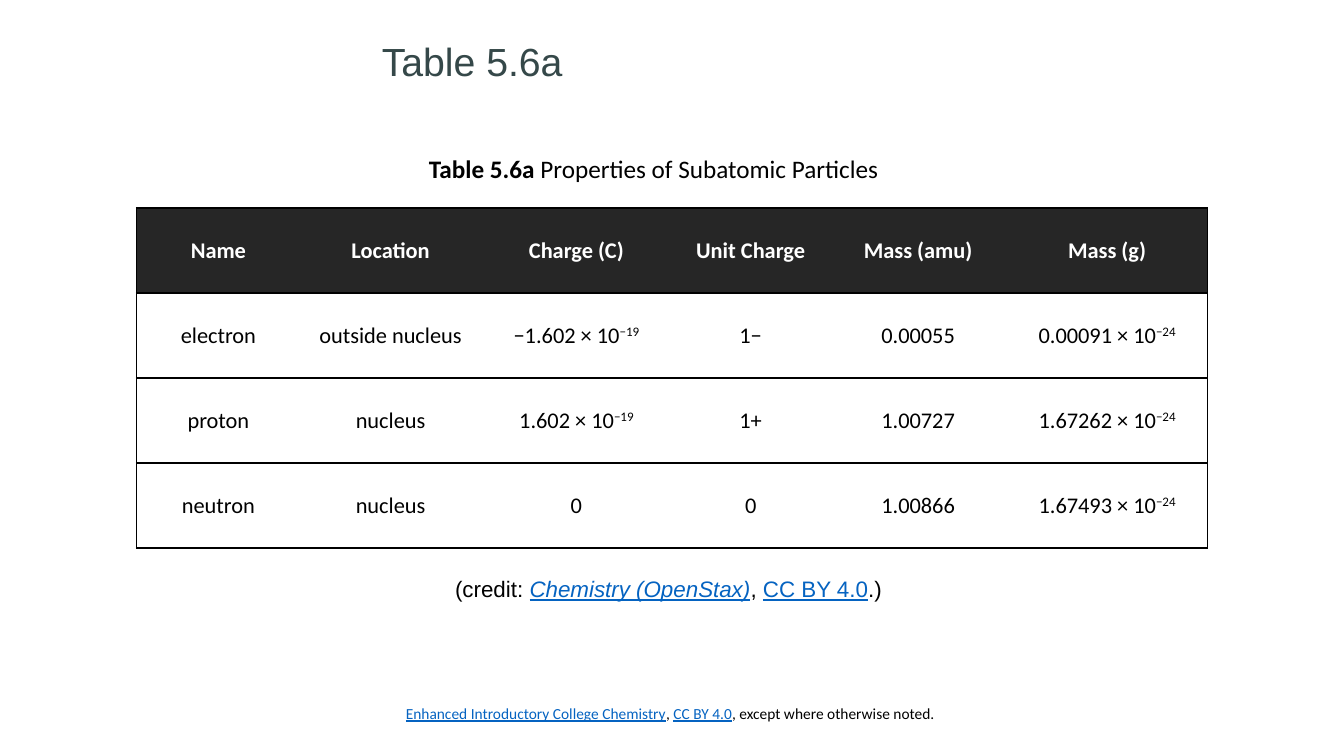
from dataclasses import dataclass

from lxml import etree
from pptx import Presentation
from pptx.dml.color import RGBColor
from pptx.enum.text import MSO_ANCHOR, MSO_AUTO_SIZE, PP_ALIGN
from pptx.oxml.ns import qn
from pptx.util import Pt

PX = 9525
LEFT, CENTER = PP_ALIGN.LEFT, PP_ALIGN.CENTER
MIDDLE, BOTTOM = MSO_ANCHOR.MIDDLE, MSO_ANCHOR.BOTTOM
GROW, FIXED = MSO_AUTO_SIZE.SHAPE_TO_FIT_TEXT, MSO_AUTO_SIZE.NONE


@dataclass(frozen=True)
class Theme:
    sans: str = "Arial"
    body: str = "Calibri"
    ink: str = "000000"
    paper: str = "FFFFFF"
    head: str = "262626"
    title: str = "354849"
    link: str = "0563C1"
    big: int = 28
    mid: int = 18
    cell: int = 16
    small: int = 11


T = Theme()
LINK = dict(color=T.link, line=True)

COLS = [156, 172, 182, 150, 169, 191]
ROW = 81
HEADS = ["Name", "Location", "Charge (C)", "Unit Charge", "Mass (amu)", "Mass (g)"]
ROWS = [
    ["electron", "outside nucleus", "−1.602 × 10^−19", "1−", "0.00055", "0.00091 × 10^−24"],
    ["proton", "nucleus", "1.602 × 10^−19", "1+", "1.00727", "1.67262 × 10^−24"],
    ["neutron", "nucleus", "0", "0", "1.00866", "1.67493 × 10^−24"],
]


def px(*nums):
    return [n * PX for n in nums]


def write(para, text, size=T.cell, face=T.body, color=T.ink,
          bold=False, slant=False, line=False, raised=False):
    run = para.add_run()
    run.text = text
    font = run.font
    font.size, font.name = Pt(size), face
    font.bold, font.italic, font.underline = bold, slant, line
    font.color.rgb = RGBColor.from_string(color)
    if raised:
        run._r.get_or_add_rPr().set("baseline", "30000")


def add_line(slide, box, parts, wrap=True, fit=FIXED, **base):
    frame = slide.shapes.add_textbox(*px(*box)).text_frame
    frame.word_wrap, frame.auto_size = wrap, fit
    for text, style in parts:
        write(frame.paragraphs[0], text, **{**base, **style})


def add_title(slide, box, text):
    title = slide.shapes.title
    title.left, title.top, title.width, title.height = px(*box)
    frame = title.text_frame
    frame.vertical_anchor, frame.auto_size = BOTTOM, FIXED
    para = frame.paragraphs[0]
    para.alignment, para.line_spacing = LEFT, 0.9
    write(para, text, size=T.big, face=T.sans, color=T.title)


def set_edges(cell, shown):
    props = cell._tc.get_or_add_tcPr()
    for spot, side in enumerate("LRTB"):
        edge = etree.Element(qn(f"a:ln{side}"), w=str(Pt(1)))
        if side in shown:
            fill = etree.SubElement(edge, qn("a:solidFill"))
            etree.SubElement(fill, qn("a:srgbClr"), val=T.ink)
        else:
            etree.SubElement(edge, qn("a:noFill"))
        props.insert(spot, edge)


def fill_cell(cell, text, back, shown, **style):
    cell.fill.solid()
    cell.fill.fore_color.rgb = RGBColor.from_string(back)
    cell.vertical_anchor = MIDDLE
    cell.margin_left = cell.margin_right = 5 * PX
    cell.margin_top = cell.margin_bottom = 2 * PX
    para = cell.text_frame.paragraphs[0]
    para.alignment = CENTER
    base, _, power = text.partition("^")
    write(para, base, **style)
    if power:
        write(para, power, raised=True, **style)
    set_edges(cell, shown)


def add_grid(slide, left, top):
    rows = [HEADS, *ROWS]
    box = px(left, top, sum(COLS), ROW * len(rows))
    grid = slide.shapes.add_table(len(rows), len(COLS), *box).table
    grid.horz_banding = False
    for col, width in zip(grid.columns, COLS):
        col.width = width * PX
    last = len(COLS) - 1
    for i, row in enumerate(rows):
        grid.rows[i].height = ROW * PX
        back, color = (T.paper, T.ink) if i else (T.head, T.paper)
        for j, text in enumerate(row):
            shown = "TB" + "L" * (j == 0) + "R" * (j == last)
            fill_cell(grid.cell(i, j), text, back, shown, color=color, bold=i == 0)


def main():
    deck = Presentation()
    deck.slide_width, deck.slide_height = px(1280, 720)
    slide = deck.slides.add_slide(deck.slide_layouts[5])
    add_line(slide, (377, 666, 679, 38), [
        ("Enhanced Introductory College Chemistry", LINK),
        (", ", {}),
        ("CC BY 4.0", LINK),
        (", except where otherwise noted.", {}),
    ], size=T.small)
    add_title(slide, (354, 19, 413, 67), "Table 5.6a")
    add_line(slide, (399, 141, 482, 38), [
        ("Table 5.6a", dict(bold=True)),
        ("\u00a0Properties of Subatomic Particles", {}),
    ], fit=GROW, size=T.mid)
    add_grid(slide, 130, 198)
    add_line(slide, (424, 543, 431, 36), [
        ("(credit: ", {}),
        ("Chemistry (OpenStax)", dict(LINK, slant=True)),
        (", ", {}),
        ("CC BY 4.0", LINK),
        (".)", {}),
    ], wrap=False, fit=GROW, face=T.sans)
    deck.save("out.pptx")


if __name__ == "__main__":
    main()
